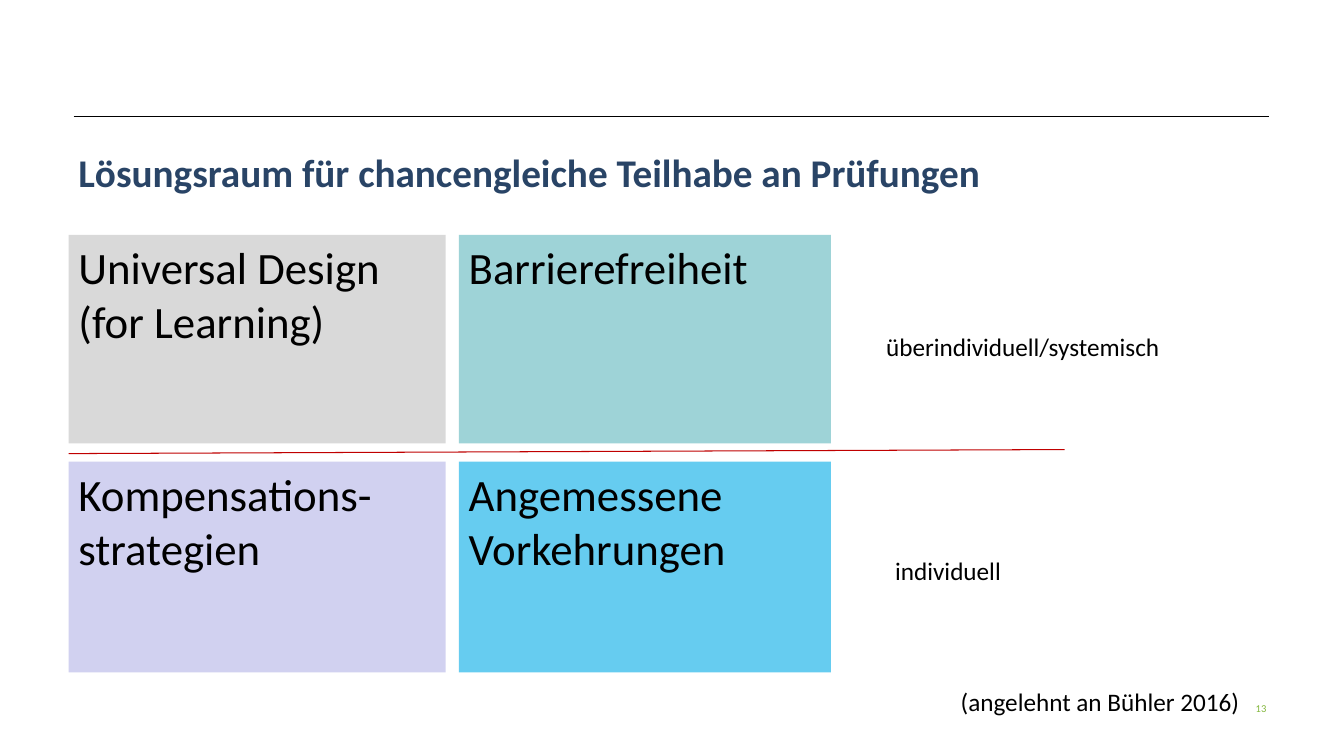
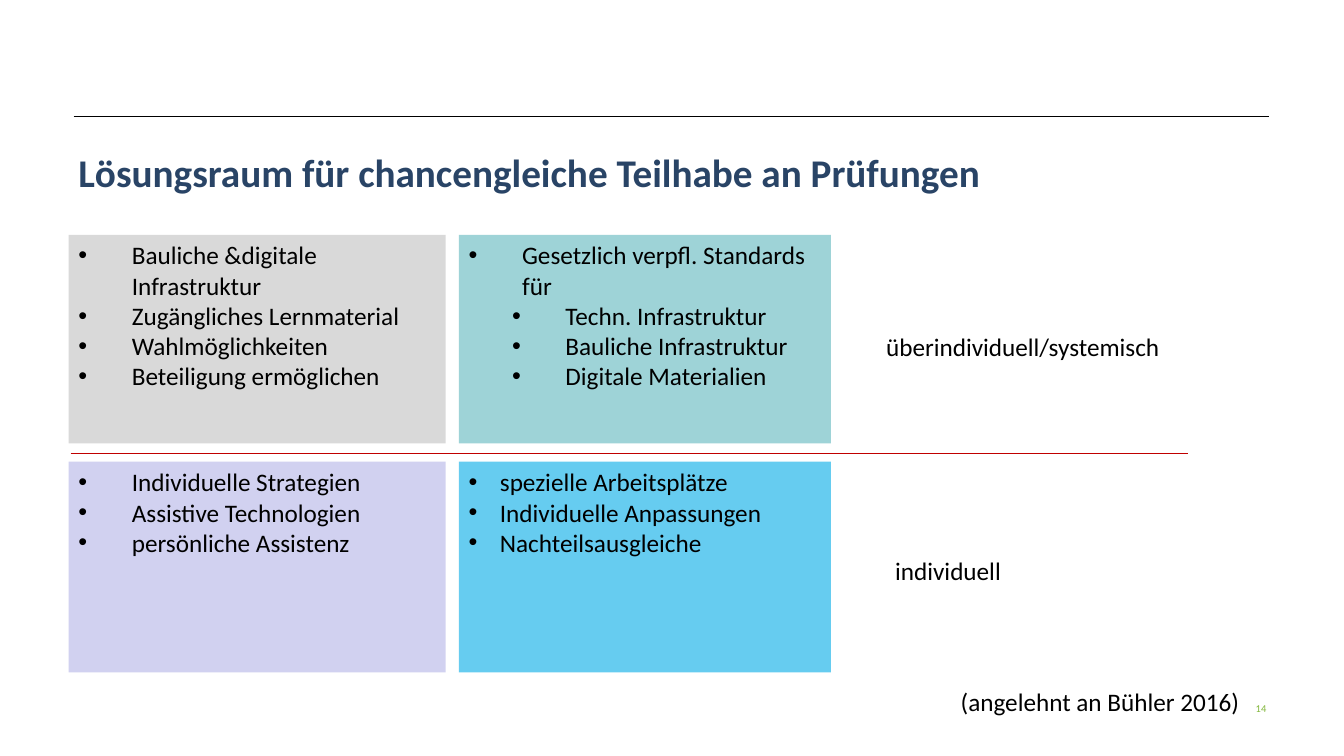
from lxml.etree import SubElement
from pptx import Presentation
from pptx.dml.color import RGBColor
from pptx.enum.shapes import MSO_CONNECTOR, MSO_SHAPE
from pptx.enum.text import MSO_ANCHOR, MSO_AUTO_SIZE, PP_ALIGN
from pptx.oxml.ns import qn
from pptx.util import Pt

EMU_PER_PX = 9144  # 100 px to the inch
FONT = "Calibri"
COLORS = {
    "text": "000000",
    "title": "294466",
    "page": "83B73D",
    "divider": "C00000",
    "universal": "D9D9D9",
    "accessible": "9ED3D7",
    "compensation": "D1D1F0",
    "provision": "00AAE6",
}
TITLE = "Lösungsraum für chancengleiche Teilhabe an Prüfungen"
SOURCE = "(angelehnt an Bühler 2016)"
COLUMNS = ((68, 374), (455, 369))  # left, width
ROWS = ((233, 207), (458, 209))  # top, height
# Fill and opacity in percent, row by row
QUADRANTS = (
    (("universal", 100), ("accessible", 100)),
    (("compensation", 100), ("provision", 60)),
)
WIDE_INDENT, NARROW_INDENT, LEVEL_STEP = 53, 31, 43


def px(length):
    return length * EMU_PER_PX


def rgb(name):
    return RGBColor.from_string(COLORS[name])


def write(paragraph, text, size, color="text", bold=False):
    for number, line in enumerate(text.split("\n")):
        if number:
            paragraph.add_line_break()
        run = paragraph.add_run()
        run.text = line
        run.font.name = FONT
        run.font.size = Pt(size)
        run.font.bold = bold
        run.font.color.rgb = rgb(color)


def set_bullet(paragraph, level, hanging):
    paragraph.level = level
    props = paragraph._p.get_or_add_pPr()
    props.set("marL", str(px(hanging + level * LEVEL_STEP)))
    props.set("indent", str(-px(hanging)))
    SubElement(props, qn("a:buFont")).set("typeface", "Arial")
    SubElement(props, qn("a:buChar")).set("char", "•")


def add_label(slide, box, text, size=18, color="text", bold=False):
    label = slide.shapes.add_textbox(*map(px, box))
    frame = label.text_frame
    frame.word_wrap = True
    write(frame.paragraphs[0], text, size, color, bold)
    return frame


def add_rule(slide, start, end, color):
    rule = slide.shapes.add_connector(
        MSO_CONNECTOR.STRAIGHT, *map(px, start + end))
    rule.line.color.rgb = rgb(color)
    rule.line.width = Pt(0.75)
    SubElement(rule._element.spPr, qn("a:effectLst"))


def add_quadrant(slide, row, column):
    """Add one coloured field of the matrix and return its text frame."""
    left, width = COLUMNS[column]
    top, height = ROWS[row]
    color, opacity = QUADRANTS[row][column]
    field = slide.shapes.add_shape(
        MSO_SHAPE.RECTANGLE, *map(px, (left, top, width, height)))
    field.shadow.inherit = False
    field.line.fill.background()
    field.fill.solid()
    field.fill.fore_color.rgb = rgb(color)
    if opacity < 100:
        tint = field._element.spPr.find(".//" + qn("a:srgbClr"))
        SubElement(tint, qn("a:alpha")).set("val", str(opacity * 1000))
    frame = field.text_frame
    frame.word_wrap = True
    frame.vertical_anchor = MSO_ANCHOR.TOP
    frame.paragraphs[0].alignment = PP_ALIGN.LEFT
    return frame


def fill_heading(frame, heading):
    write(frame.paragraphs[0], heading, 32)


def fill_bullets(frame, content):
    """Write the hanging indent's list of (level, text) items."""
    hanging, items = content
    for number, (level, text) in enumerate(items):
        paragraph = frame.add_paragraph() if number else frame.paragraphs[0]
        paragraph.alignment = PP_ALIGN.LEFT
        set_bullet(paragraph, level, hanging)
        write(paragraph, text, 18)


def add_frame(slide, page):
    """Add the header rule, page number and title that all slides share."""
    add_rule(slide, (73, 116), (1259, 116), "text")
    number = add_label(slide, (1089, 692, 167, 50), str(page), 7.5, "page")
    number.margin_right = 0
    number.paragraphs[0].alignment = PP_ALIGN.RIGHT
    title = add_label(slide, (68, 116, 1186, 108), TITLE, 28, "title", True)
    title.vertical_anchor = MSO_ANCHOR.MIDDLE


def add_matrix_slide(prs, page, matrix, fill_field, divider):
    slide = prs.slides.add_slide(prs.slide_layouts[6])
    add_frame(slide, page)
    for row, contents in enumerate(matrix):
        for column, content in enumerate(contents):
            fill_field(add_quadrant(slide, row, column), content)
    for box, text in (
        ((869, 324, 364, 41), "überindividuell/systemisch"),
        ((878, 546, 179, 41), "individuell"),
        ((943, 676, 311, 41), SOURCE),
    ):
        add_label(slide, box, text).auto_size = MSO_AUTO_SIZE.SHAPE_TO_FIT_TEXT
    add_rule(slide, *divider, "divider")


def main():
    prs = Presentation()
    prs.slide_width, prs.slide_height = px(1333), px(750)

    headings = (
        ("Universal Design\n(for Learning)", "Barrierefreiheit"),
        ("Kompensations-strategien", "Angemessene Vorkehrungen"),
    )
    add_matrix_slide(prs, 13, headings, fill_heading, ((68, 450), (1056, 446)))

    measures = (
        (
            (WIDE_INDENT, (
                (0, "Bauliche &digitale Infrastruktur"),
                (0, "Zugängliches Lernmaterial"),
                (0, "Wahlmöglichkeiten"),
                (0, "Beteiligung ermöglichen"),
            )),
            (WIDE_INDENT, (
                (0, "Gesetzlich verpfl. Standards für"),
                (1, "Techn. Infrastruktur"),
                (1, "Bauliche Infrastruktur"),
                (1, "Digitale Materialien"),
            )),
        ),
        (
            (WIDE_INDENT, (
                (0, "Individuelle Strategien"),
                (0, "Assistive Technologien"),
                (0, "persönliche Assistenz"),
            )),
            (NARROW_INDENT, (
                (0, "spezielle Arbeitsplätze"),
                (0, "Individuelle Anpassungen"),
                (0, "Nachteilsausgleiche"),
            )),
        ),
    )
    add_matrix_slide(prs, 14, measures, fill_bullets, ((70, 450), (1178, 450)))

    prs.save("out.pptx")


if __name__ == "__main__":
    main()
